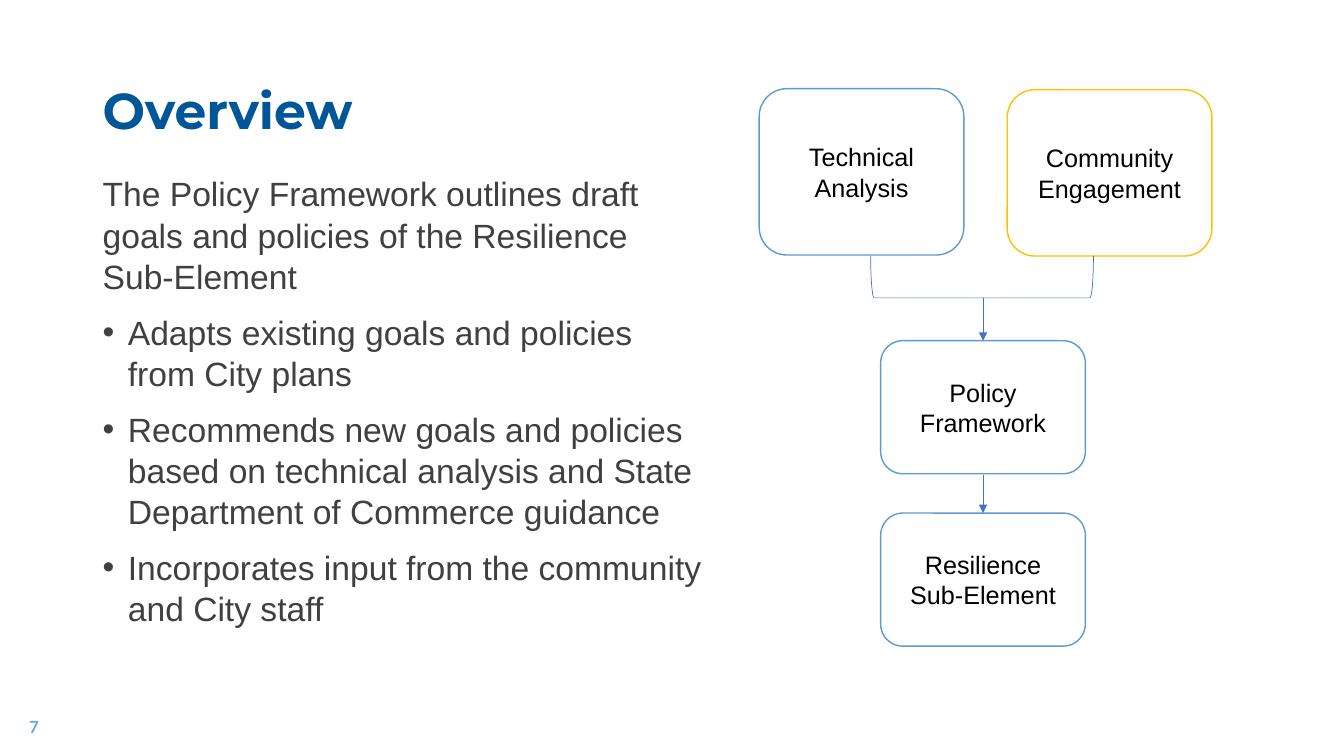
from dataclasses import dataclass

from lxml import etree
from pptx import Presentation
from pptx import util as u
from pptx.dml.color import RGBColor
from pptx.enum import shapes, text
from pptx.oxml.ns import qn

COLORS = {
    "title": "005696", "body": "404040", "number": "66AAD3", "label": "000000",
    "box": "FFFFFF", "blue": "5B9BD5", "gold": "FFC000", "link": "4472C4",
}

# Grid cells are a tenth of an inch; 133.3 columns by 75 rows
CELL = u.Inches(0.1)
COLUMNS, ROWS = 133.3, 75
MARGIN = 9.2
AXIS = 97.5
BOX_WIDTH = 20.3
BULLET_INDENT = 2.5


def cells(count: float) -> u.Emu:
    return u.Emu(round(count * CELL))


def color(key: str) -> RGBColor:
    return RGBColor.from_string(COLORS[key])


@dataclass
class TextStyle:
    font: str
    size: float
    color: str
    bold: bool = False

    def apply(self, paragraph) -> None:
        font = paragraph.font
        font.name, font.size, font.bold = self.font, u.Pt(self.size), self.bold
        font.color.rgb = color(self.color)


@dataclass
class Step:
    label: str
    center: float
    top: float
    height: float
    outline: str = "blue"


@dataclass
class Arrow:
    start: float
    end: float


TITLE = TextStyle("Montserrat", 36, "title", True)
BODY = TextStyle("Arial", 24, "body")
NUMBER = TextStyle("Lato", 12, "number", True)
LABEL = TextStyle("Arial", 18, "label")

INTRO = "The Policy Framework outlines draft goals and policies of the Resilience Sub-Element"
POINTS = [
    "Adapts existing goals and policies from City plans",
    "Recommends new goals and policies based on technical analysis and State "
    "Department of Commerce guidance",
    "Incorporates input from the community and City staff",
]
STEPS = [
    Step("Technical Analysis", 85.45, 8.8, 16.5),
    Step("Community Engagement", 110.05, 8.9, 16.5, "gold"),
    Step("Policy Framework", AXIS, 33.8, 13.2),
    Step("Resilience Sub-Element", AXIS, 50.9, 13.2),
]
ARROWS = [Arrow(29.6, 33.8), Arrow(47.1, 50.9)]


def add_text(slide, left: float, top: float, width: float, height: float,
             anchor=text.MSO_ANCHOR.MIDDLE):
    frame = slide.shapes.add_textbox(*map(cells, (left, top, width, height))).text_frame
    frame.word_wrap = True
    frame.vertical_anchor = anchor
    return frame


def add_line_of_text(frame, words: str, style: TextStyle):
    paragraph = frame.paragraphs[0]
    paragraph.text = words
    style.apply(paragraph)
    return paragraph


def add_bullet(paragraph) -> None:
    properties = paragraph._p.get_or_add_pPr()
    indent = cells(BULLET_INDENT)
    properties.set("marL", str(indent))
    properties.set("indent", str(-indent))
    etree.SubElement(properties, qn("a:buFont")).set("typeface", "Arial")
    etree.SubElement(properties, qn("a:buChar")).set("char", "•")


def add_body(slide) -> None:
    frame = add_text(slide, MARGIN, 16.6, 61.8, 47.6, text.MSO_ANCHOR.TOP)
    for index, words in enumerate([INTRO, *POINTS]):
        paragraph = frame.add_paragraph() if index else frame.paragraphs[0]
        paragraph.text = words
        paragraph.line_spacing = u.Pt(29.6)
        if index:
            paragraph.space_before = u.Pt(10)
            add_bullet(paragraph)
        BODY.apply(paragraph)


def add_step(slide, step: Step) -> None:
    box = slide.shapes.add_shape(
        shapes.MSO_SHAPE.ROUNDED_RECTANGLE, cells(step.center - BOX_WIDTH / 2),
        cells(step.top), cells(BOX_WIDTH), cells(step.height))
    box.shadow.inherit = False
    box.fill.solid()
    box.fill.fore_color.rgb = color("box")
    box.line.color.rgb = color(step.outline)
    box.line.width = u.Pt(1)
    box.text_frame.word_wrap = True
    box.text_frame.vertical_anchor = text.MSO_ANCHOR.MIDDLE
    label = add_line_of_text(box.text_frame, step.label, LABEL)
    label.alignment = text.PP_ALIGN.CENTER


def style_link(link) -> None:
    link.line.color.rgb = color("link")
    link.line.width = u.Pt(0.5)


def add_bracket(slide) -> None:
    bracket = slide.shapes.add_shape(
        shapes.MSO_SHAPE.RIGHT_BRACKET, *map(cells, (95.3, 16.4, 4.2, 22.1)))
    bracket.rotation = 90
    bracket.shadow.inherit = False
    bracket.fill.background()
    style_link(bracket)


def add_arrow(slide, arrow: Arrow) -> None:
    link = slide.shapes.add_connector(
        shapes.MSO_CONNECTOR.STRAIGHT,
        *map(cells, (AXIS, arrow.start, AXIS, arrow.end)))
    style_link(link)
    etree.SubElement(link.line._get_or_add_ln(), qn("a:tailEnd")).set("type", "triangle")
    etree.SubElement(link._element.spPr, qn("a:effectLst"))


def main() -> None:
    deck = Presentation()
    deck.slide_width, deck.slide_height = cells(COLUMNS), cells(ROWS)
    slide = deck.slides.add_slide(deck.slide_layouts[6])

    # Title, body and slide number
    title = add_line_of_text(add_text(slide, MARGIN, 4, 115, 14.5), "Overview", TITLE)
    title.line_spacing = 0.9
    add_body(slide)
    add_line_of_text(add_text(slide, 1.9, 70.1, 30, 4), "7", NUMBER)

    # Flow from the two inputs to the sub-element
    for step in STEPS:
        add_step(slide, step)
    add_bracket(slide)
    for arrow in ARROWS:
        add_arrow(slide, arrow)

    deck.save("out.pptx")


if __name__ == "__main__":
    main()
